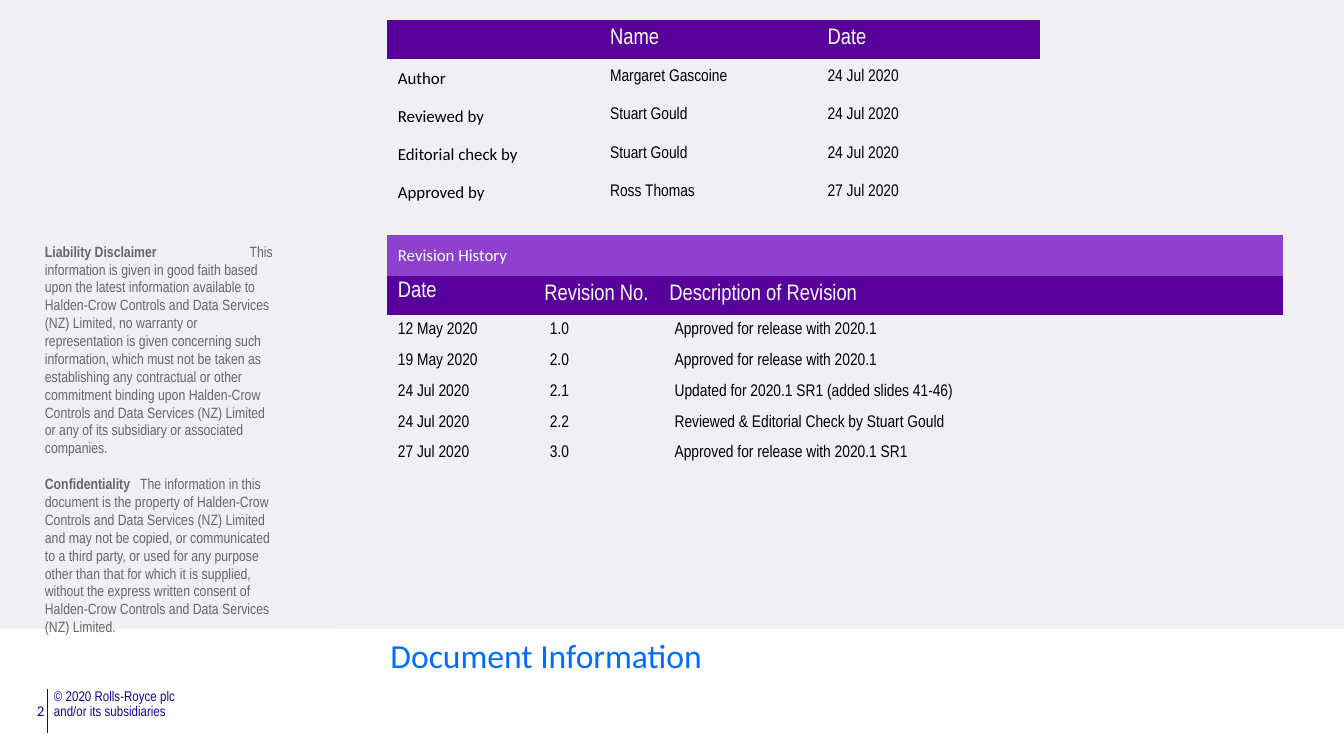
from lxml.etree import SubElement
from pptx import Presentation
from pptx.dml.color import RGBColor
from pptx.enum.shapes import MSO_CONNECTOR, MSO_SHAPE
from pptx.enum.text import MSO_ANCHOR, PP_ALIGN
from pptx.oxml.ns import qn
from pptx.util import Cm, Pt

COLOURS = {
    "white": "FFFFFF", "black": "000000", "panel": "EFEFF4", "navy": "10069F",
    "blue": "006DFF", "grey": "666666", "purple": "58009C", "violet": "8E40CF",
}
NARROW = "Arial Narrow"
CALIBRI = "Calibri"
PLAIN_TABLE = "{2D5ABB26-0587-4C30-8999-92F81FD0307C}"
LABEL_INSETS = (0.2, 0.1, 0.2, 0.1)
HEADING_INSETS = (0.1, 0.1, 0.1, 0.13)
ENTRY_INSETS = (0.2, 0.1, 0.1, 0.1)

OWNER = "Halden-Crow Controls and Data Services (NZ) Limited"
NOTICES = [
    ("Liability Disclaimer", 3.87,
     "This information is given in good faith based upon the latest information "
     f"available to {OWNER}, no warranty or representation is given concerning such "
     "information, which must not be taken as establishing any contractual or other "
     f"commitment binding upon {OWNER} or any of its subsidiary or associated companies."),
    ("Confidentiality", 1.8,
     f"The information in this document is the property of {OWNER} and may not be "
     "copied, or communicated to a third party, or used for any purpose other than that "
     f"for which it is supplied, without the express written consent of {OWNER}."),
]
SIGN_OFFS = [
    ("", "Name", "Date"),
    ("Author", "Margaret Gascoine", "24 Jul 2020"),
    ("Reviewed by", "Stuart Gould", "24 Jul 2020"),
    ("Editorial check by", "Stuart Gould", "24 Jul 2020"),
    ("Approved by", "Ross Thomas", "27 Jul 2020"),
]
REVISIONS = [
    ("Date", "Revision No.", "Description of Revision"),
    ("12 May 2020", "1.0", "Approved for release with 2020.1"),
    ("19 May 2020", "2.0", "Approved for release with 2020.1"),
    ("24 Jul 2020", "2.1", "Updated for 2020.1 SR1 (added slides 41-46)"),
    ("24 Jul 2020", "2.2", "Reviewed & Editorial Check by Stuart Gould"),
    ("27 Jul 2020", "3.0", "Approved for release with 2020.1 SR1"),
]


class PageBuilder:
    def __init__(self, page):
        self.page = page

    def colour(self, name):
        return RGBColor.from_string(COLOURS[name])

    def style(self, para, size, face, colour):
        para.font.size = Pt(size)
        para.font.name = face
        para.font.color.rgb = self.colour(colour)

    def inset(self, target, insets):
        (target.margin_left, target.margin_top,
         target.margin_right, target.margin_bottom) = map(Cm, insets)

    def rectangle(self, left, top, width, height, fill):
        shape = self.page.shapes.add_shape(
            MSO_SHAPE.RECTANGLE, Cm(left), Cm(top), Cm(width), Cm(height))
        shape.shadow.inherit = False
        shape.fill.solid()
        shape.fill.fore_color.rgb = self.colour(fill)
        shape.line.fill.background()
        return shape

    def line(self, start_x, start_y, end_x, end_y, colour, weight):
        line = self.page.shapes.add_connector(
            MSO_CONNECTOR.STRAIGHT, Cm(start_x), Cm(start_y), Cm(end_x), Cm(end_y))
        line.line.color.rgb = self.colour(colour)
        line.line.width = Pt(weight)
        SubElement(line._element.spPr, qn("a:effectLst"))

    def frame(self, left, top, width, height, insets=(0.25, 0.13, 0.25, 0.13)):
        box = self.page.shapes.add_textbox(Cm(left), Cm(top), Cm(width), Cm(height))
        box.text_frame.word_wrap = True
        self.inset(box.text_frame, insets)
        return box.text_frame

    def fill_text(self, frame, lines, size, face, colour, align=PP_ALIGN.LEFT, spacing=None):
        frame.text = "\n".join(lines)
        for para in frame.paragraphs:
            para.alignment = align
            para.line_spacing = spacing
            self.style(para, size, face, colour)

    def notices(self, frame, entries):
        for index, (heading, tab, body) in enumerate(entries):
            para = frame.add_paragraph() if index else frame.paragraphs[0]
            if index:
                para.space_before = Pt(9.6)
            tabs = SubElement(para._p.get_or_add_pPr(), qn("a:tabLst"))
            SubElement(tabs, qn("a:tab"), pos=str(Cm(tab)), algn="l")
            self.style(para, 8, NARROW, "grey")
            for text, bold in ((heading + "\t", True), (body, False)):
                span = para.add_run()
                span.text = text
                span.font.bold = bold

    def table(self, left, top, widths, heights):
        table = self.page.shapes.add_table(
            len(heights), len(widths), Cm(left), Cm(top),
            Cm(sum(widths)), Cm(sum(heights))).table
        table.first_row = table.horz_banding = False
        table._tbl.tblPr.find(qn("a:tableStyleId")).text = PLAIN_TABLE
        for column, width in zip(table.columns, widths):
            column.width = Cm(width)
        for row, height in zip(table.rows, heights):
            row.height = Cm(height)
        return table

    def cell(self, cell, text, insets, size, face, colour, fill=None,
             anchor=MSO_ANCHOR.MIDDLE):
        cell.text = text
        cell.vertical_anchor = anchor
        self.inset(cell, insets)
        para = cell.text_frame.paragraphs[0]
        self.style(para, size, face, colour)
        if not text:
            SubElement(para._p, qn("a:endParaRPr"), sz=str(size * 100))
        if fill:
            cell.fill.solid()
            cell.fill.fore_color.rgb = self.colour(fill)
        else:
            cell.fill.background()


def add_sign_offs(builder):
    table = builder.table(7.32, 0.38, [4.11] * 3, [0.74] + [0.72] * 4)
    for r, row in enumerate(SIGN_OFFS):
        for c, text in enumerate(row):
            if r == 0:
                look = (HEADING_INSETS, 12, NARROW, "white", "purple")
            elif c == 0:
                look = (LABEL_INSETS, 9, CALIBRI, "black")
            else:
                look = (HEADING_INSETS, 9, NARROW, "black")
            builder.cell(table.cell(r, c), text, *look)


def add_revisions(builder):
    table = builder.table(7.32, 4.45, [2.87, 2.36, 11.7], [0.76, 0.67] + [0.58] * 5)
    table.cell(0, 0).merge(table.cell(0, 2))
    builder.cell(table.cell(0, 0), "Revision History", LABEL_INSETS,
                 9, CALIBRI, "white", "violet")
    for r, row in enumerate(REVISIONS, start=1):
        for c, text in enumerate(row):
            if r > 1:
                look = (ENTRY_INSETS, 9, NARROW, "black")
            elif c == 0:
                look = (ENTRY_INSETS, 12, NARROW, "white", "purple", MSO_ANCHOR.TOP)
            else:
                look = (HEADING_INSETS, 12, NARROW, "white", "purple")
            builder.cell(table.cell(r, c), text, *look)


def main():
    deck = Presentation()
    deck.slide_width, deck.slide_height = Cm(25.4), Cm(14.29)
    builder = PageBuilder(deck.slides.add_slide(deck.slide_layouts[6]))

    builder.line(0.89, 13.03, 0.89, 13.85, "navy", 0.5)
    builder.fill_text(builder.frame(1.02, 13.03, 5.64, 0.86, (0, 0, 0, 0)),
                      ["© 2020 Rolls-Royce plc", "and/or its subsidiaries"],
                      7.5, NARROW, "navy", spacing=0.9)
    builder.rectangle(0, 0, 25.4, 11.89, "panel")
    builder.fill_text(builder.frame(0.13, 13.13, 0.96, 0.6), ["2"],
                      8, CALIBRI, "navy", PP_ALIGN.RIGHT)

    title = builder.rectangle(6.38, 11.89, 19.02, 2.4, "white").text_frame
    title.vertical_anchor = MSO_ANCHOR.TOP
    builder.inset(title, (1, 0.2, 0.2, 0))
    builder.fill_text(title, ["Document Information"], 18, CALIBRI, "blue", spacing=0.9)

    builder.notices(builder.frame(0.6, 4.45, 4.9, 8.46), NOTICES)
    add_sign_offs(builder)
    add_revisions(builder)
    deck.save("out.pptx")


if __name__ == "__main__":
    main()
